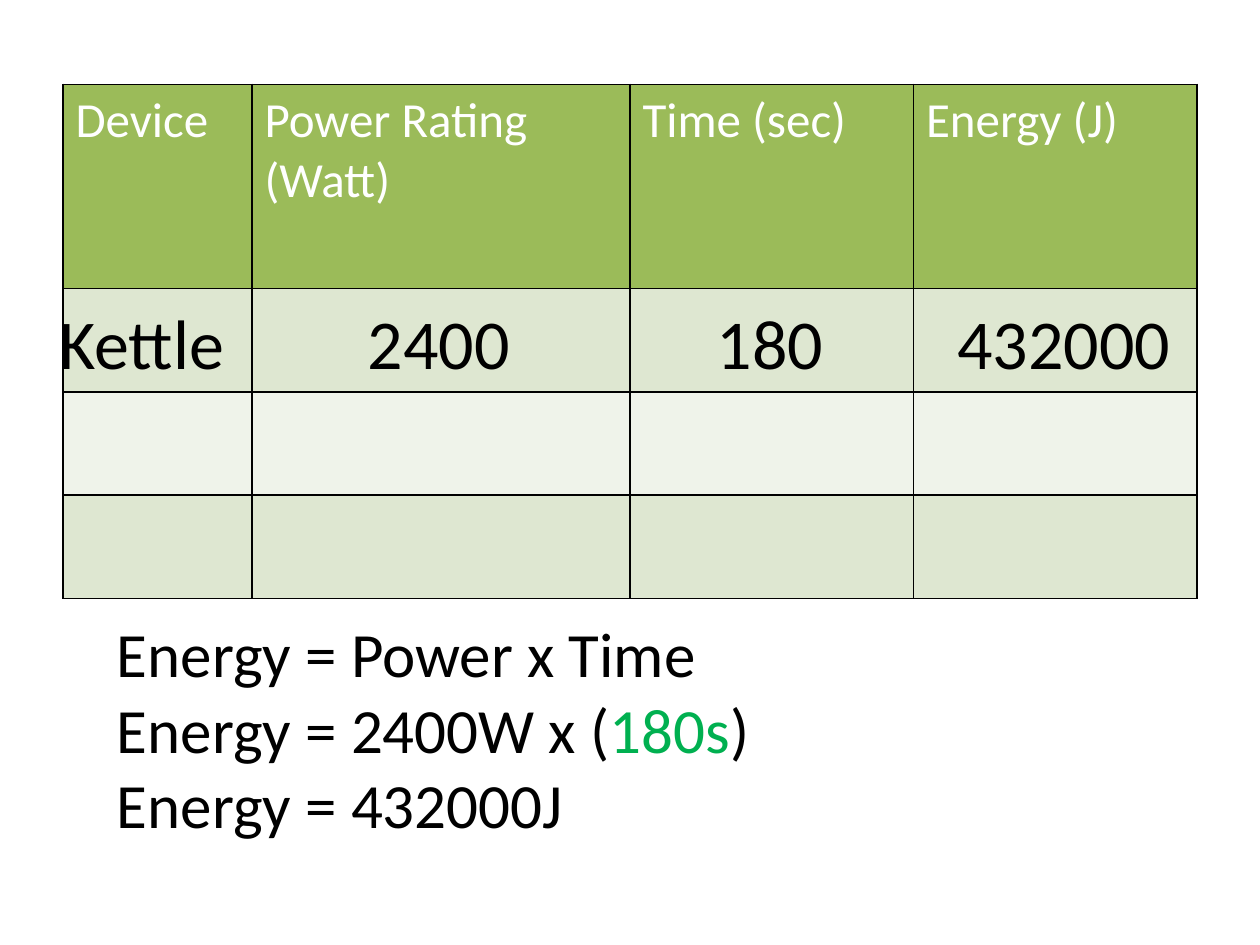
from dataclasses import dataclass

from lxml.etree import SubElement
from pptx import Presentation
from pptx.dml.color import RGBColor as Rgb
from pptx.enum.text import MSO_ANCHOR as Anchor
from pptx.oxml.ns import qn
from pptx.util import Inches, Pt


@dataclass(frozen=True)
class Theme:
    font: str = "Calibri"
    header_size: int = 28
    formula_size: int = 36
    reading_size: int = 40
    text: str = "000000"
    header_text: str = "FFFFFF"
    highlight: str = "00B050"
    header_fill: str = "9BBB59"
    bands: tuple[str, str] = ("DEE7D1", "EFF3EA")
    border: str = "000000"


@dataclass(frozen=True)
class Span:
    text: str
    color: str


@dataclass(frozen=True)
class Box:
    left: float
    top: float
    width: float
    height: float
    left_inset: float = 0.1


@dataclass(frozen=True)
class Column:
    heading: str
    width: float


THEME = Theme()
COLUMNS = [
    Column("Device", 1.5),
    Column("Power Rating (Watt)", 3),
    Column("Time (sec)", 2.25),
    Column("Energy (J)", 2.25),
]
HEADER_HEIGHT = 1.62
ROW_HEIGHT = 0.82
ROW_COUNT = 4
READING_TABS = (2.45, 5.22)


def style_run(run, size: int, color: str) -> None:
    run.font.name = THEME.font
    run.font.size = Pt(size)
    run.font.color.rgb = Rgb.from_string(color)


def border_cell(cell) -> None:
    """Put a thin line on each side, ahead of the cell's fill."""
    properties = cell._tc.get_or_add_tcPr()
    for index, side in enumerate(("a:lnL", "a:lnR", "a:lnT", "a:lnB")):
        line = SubElement(properties, qn(side), w=str(Pt(1)))
        fill = SubElement(line, qn("a:solidFill"))
        SubElement(fill, qn("a:srgbClr"), val=THEME.border)
        properties.insert(index, line)


def add_energy_table(slide) -> None:
    height = HEADER_HEIGHT + (ROW_COUNT - 1) * ROW_HEIGHT
    table = slide.shapes.add_table(
        ROW_COUNT, len(COLUMNS), Inches(0.5), Inches(0.67),
        Inches(sum(column.width for column in COLUMNS)), Inches(height),
    ).table
    for index, column in enumerate(COLUMNS):
        table.columns[index].width = Inches(column.width)
        heading = table.cell(0, index)
        heading.text_frame.text = column.heading
        heading_run = heading.text_frame.paragraphs[0].runs[0]
        style_run(heading_run, THEME.header_size, THEME.header_text)
        heading_run.font.bold = False
    for index, row in enumerate(table.rows):
        row.height = Inches(ROW_HEIGHT if index else HEADER_HEIGHT)
        color = THEME.bands[(index - 1) % 2] if index else THEME.header_fill
        for cell in row.cells:
            cell.fill.solid()
            cell.fill.fore_color.rgb = Rgb.from_string(color)
            border_cell(cell)


def add_text(slide, box: Box, lines: list[list[Span]], size: int):
    frame = slide.shapes.add_textbox(
        Inches(box.left), Inches(box.top), Inches(box.width), Inches(box.height)
    ).text_frame
    frame.word_wrap = True
    frame.vertical_anchor = Anchor.TOP
    frame.margin_left = Inches(box.left_inset)
    for index, spans in enumerate(lines):
        paragraph = frame.add_paragraph() if index else frame.paragraphs[0]
        for span in spans:
            run = paragraph.add_run()
            run.text = span.text
            style_run(run, size, span.color)
    return frame


def set_tabs(paragraph, positions: tuple[float, ...]) -> None:
    tab_list = SubElement(paragraph._p.get_or_add_pPr(), qn("a:tabLst"))
    for position in positions:
        SubElement(tab_list, qn("a:tab"), pos=str(Inches(position)), algn="l")


def main() -> None:
    deck = Presentation()
    deck.slide_width, deck.slide_height = Inches(10), Inches(7.5)
    slide = deck.slides.add_slide(deck.slide_layouts[6])

    # Table of devices
    add_energy_table(slide)

    # Kettle readings, lined up with the table columns
    readings = add_text(
        slide, Box(0.42, 2.33, 9.42, 0.77, left_inset=0.05),
        [[Span("Kettle\t2400\t180", THEME.text)]], THEME.reading_size,
    )
    set_tabs(readings.paragraphs[0], READING_TABS)

    # Worked calculation
    calculation = [
        [Span("Energy = Power x Time", THEME.text)],
        [
            Span("Energy = 2400W x (", THEME.text),
            Span("180s", THEME.highlight),
            Span(")", THEME.text),
        ],
        [Span("Energy = 432000J", THEME.text)],
    ]
    add_text(slide, Box(0.83, 4.83, 8.67, 1.92), calculation, THEME.formula_size)

    # Resulting energy
    add_text(
        slide, Box(7.5, 2.33, 2.08, 0.77),
        [[Span("432000", THEME.text)]], THEME.reading_size,
    )

    deck.save("out.pptx")


if __name__ == "__main__":
    main()
